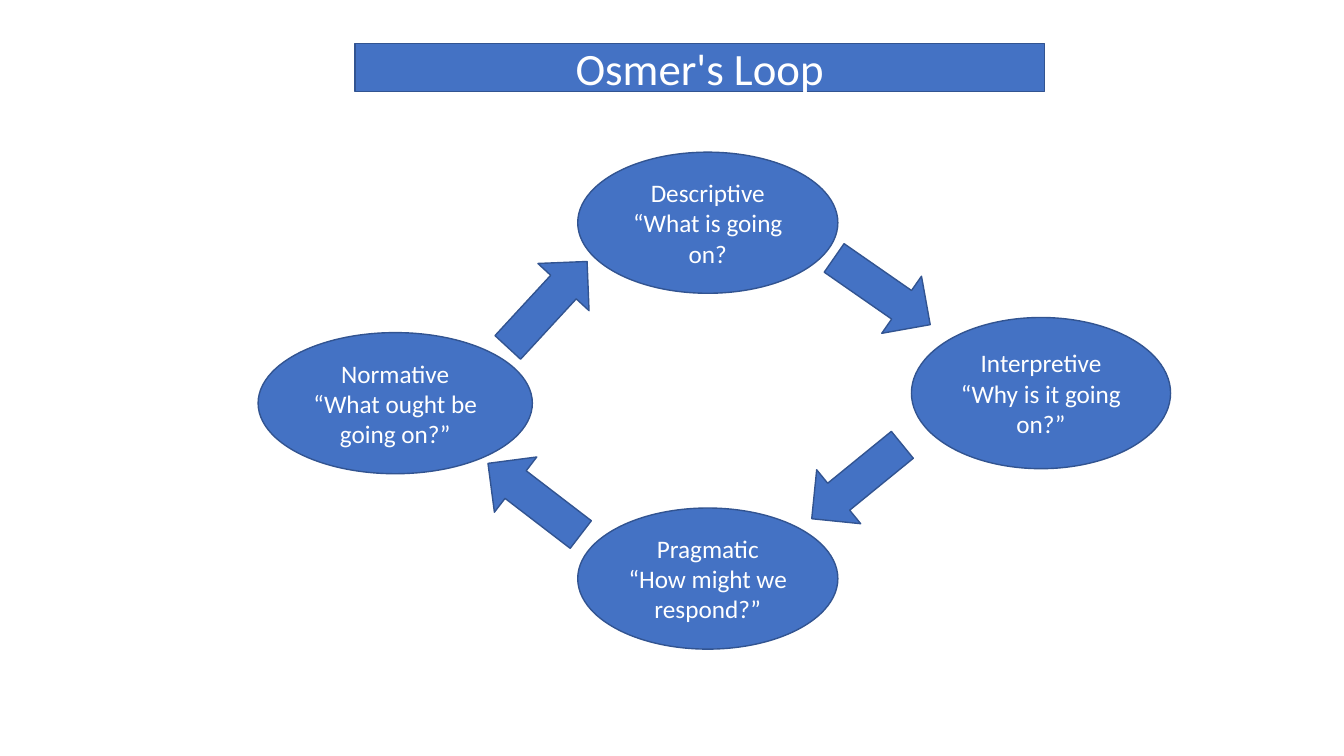
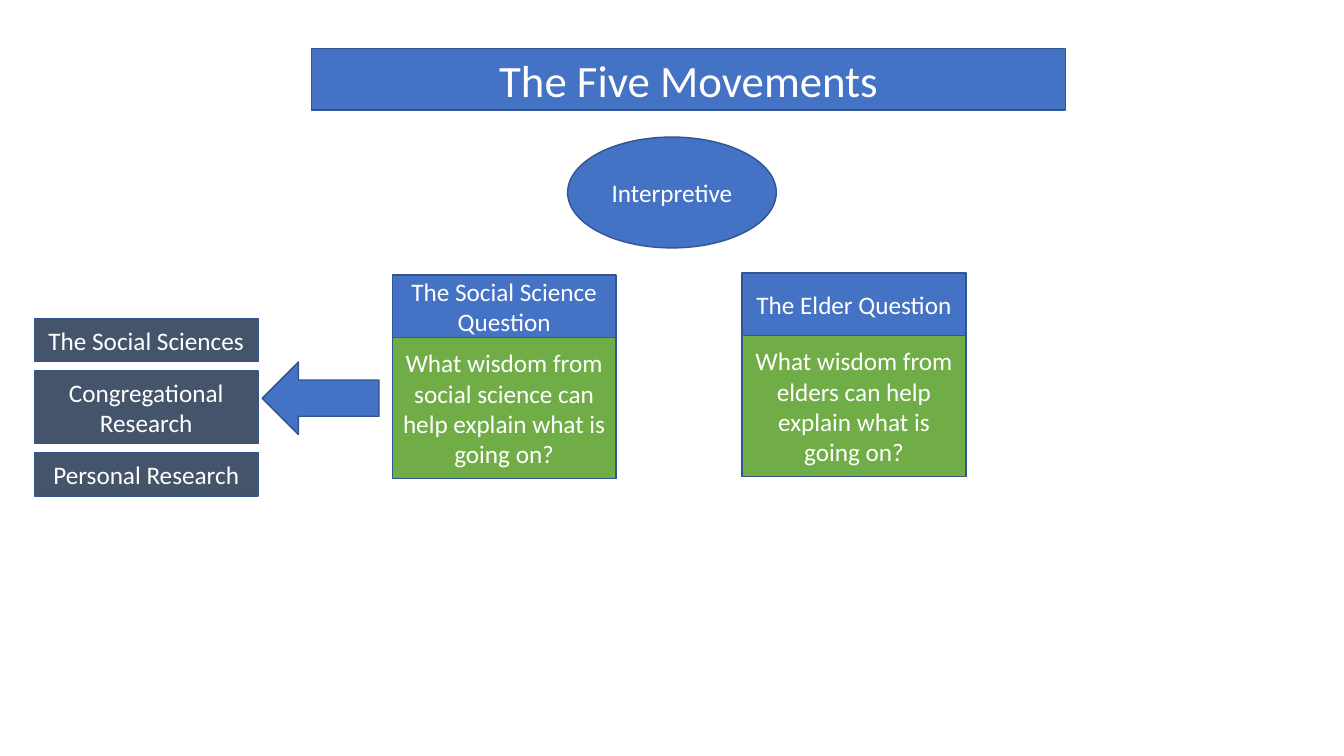
from pptx import Presentation
from pptx.dml.color import RGBColor
from pptx.enum.shapes import MSO_SHAPE
from pptx.enum.text import MSO_ANCHOR, MSO_AUTO_SIZE, PP_ALIGN
from pptx.util import Inches, Pt

OVAL, BOX = MSO_SHAPE.OVAL, MSO_SHAPE.RECTANGLE
DOWN_ARROW, LEFT_ARROW = MSO_SHAPE.DOWN_ARROW, MSO_SHAPE.LEFT_ARROW
MIDDLE, CENTER, NO_FIT = MSO_ANCHOR.MIDDLE, PP_ALIGN.CENTER, MSO_AUTO_SIZE.NONE

FONT, TITLE_SIZE, BODY_SIZE = "Calibri", 32, 18
BLUE, GREEN, SLATE = "4472C4", "70AD47", "44546A"
OUTLINE, WHITE = "325491", "FFFFFF"
TITLE_ONLY = 5

# Slide 1: left, top, width, height and lines of each stage
STAGES = [
    ((5.73, 1.51, 2.58, 1.4), ["Descriptive", "“What is going on?"]),
    ((9.04, 3.15, 2.57, 1.5), ["Interpretive", "“Why is it going on?”"]),
    ((5.73, 5.04, 2.58, 1.4), ["Pragmatic", "“How might we respond?”"]),
    ((2.56, 3.3, 2.72, 1.4), ["Normative", "“What ought be going on?”"]),
]
# Centre x, centre y and clockwise turn of each arrow between stages
LOOP_ARROWS = [
    (8.75, 2.89, 304.8),
    (8.5, 4.78, 50.8),
    (5.3, 4.95, 127.5),
    (5.43, 3.02, 222.7),
]
ARROW_WIDTH, ARROW_LENGTH = 0.69, 1.16

# Slide 2: left, top, heading and question of each card
CARDS = [
    (3.89, 2.73, "The Social Science Question",
     "What wisdom from social science can help explain what is going on?"),
    (7.36, 2.71, "The Elder Question",
     "What wisdom from elders can help explain what is going on?"),
]
HEADING_HEIGHT, QUESTION_HEIGHT = 0.62, 1.4
# Heights and names of the stacked sources
SOURCES = [
    (0.43, "The Social Sciences"),
    (0.72, "Congregational Research"),
    (0.43, "Personal Research"),
]
SOURCE_LEFT, SOURCE_TOP, SOURCE_GAP = 0.34, 3.16, 0.09
COLUMN_WIDTH = 2.22


def color(hex_string):
    return RGBColor.from_string(hex_string)


def style(shape, fill, lines, size):
    """Give a shape its fill, outline and centred white text."""
    shape.fill.solid()
    shape.fill.fore_color.rgb = color(fill)
    shape.line.color.rgb = color(OUTLINE)
    shape.line.width = Pt(1)
    frame = shape.text_frame
    frame.word_wrap = True
    frame.auto_size = NO_FIT
    frame.vertical_anchor = MIDDLE
    for index, line in enumerate(lines):
        paragraph = frame.add_paragraph() if index else frame.paragraphs[0]
        paragraph.alignment = CENTER
        run = paragraph.add_run()
        run.text = line
        run.font.name = FONT
        run.font.size = Pt(size)
        run.font.color.rgb = color(WHITE)


def add_figure(slide, kind, box, fill=BLUE, lines=()):
    shape = slide.shapes.add_shape(kind, *map(Inches, box))
    shape.shadow.inherit = False
    style(shape, fill, lines, BODY_SIZE)
    return shape


def add_titled_slide(presentation, title, box):
    slide = presentation.slides.add_slide(presentation.slide_layouts[TITLE_ONLY])
    band = slide.shapes.title
    band.left, band.top, band.width, band.height = map(Inches, box)
    style(band, BLUE, [title], TITLE_SIZE)
    return slide


def build_loop(presentation):
    slide = add_titled_slide(presentation, "Osmer's Loop", (3.52, 0.43, 6.84, 0.48))
    for box, lines in STAGES:
        add_figure(slide, OVAL, box, lines=lines)
    for x, y, turn in LOOP_ARROWS:
        box = (x - ARROW_WIDTH / 2, y - ARROW_LENGTH / 2, ARROW_WIDTH, ARROW_LENGTH)
        add_figure(slide, DOWN_ARROW, box).rotation = turn


def build_movements(presentation):
    slide = add_titled_slide(presentation, "The Five Movements", (3.09, 0.48, 7.48, 0.61))
    add_figure(slide, OVAL, (5.63, 1.36, 2.07, 1.1), lines=["Interpretive"])
    for left, top, heading, question in CARDS:
        add_figure(slide, BOX, (left, top, COLUMN_WIDTH, HEADING_HEIGHT), BLUE, [heading])
        add_figure(slide, BOX, (left, top + HEADING_HEIGHT, COLUMN_WIDTH, QUESTION_HEIGHT),
                   GREEN, [question])
    top = SOURCE_TOP
    for height, name in SOURCES:
        add_figure(slide, BOX, (SOURCE_LEFT, top, COLUMN_WIDTH, height), SLATE, [name])
        top += height + SOURCE_GAP
    add_figure(slide, LEFT_ARROW, (2.6, 3.59, 1.16, 0.72))


def main():
    presentation = Presentation()
    presentation.slide_width = Inches(13.33)
    presentation.slide_height = Inches(7.5)
    build_loop(presentation)
    build_movements(presentation)
    presentation.save("out.pptx")


if __name__ == "__main__":
    main()
